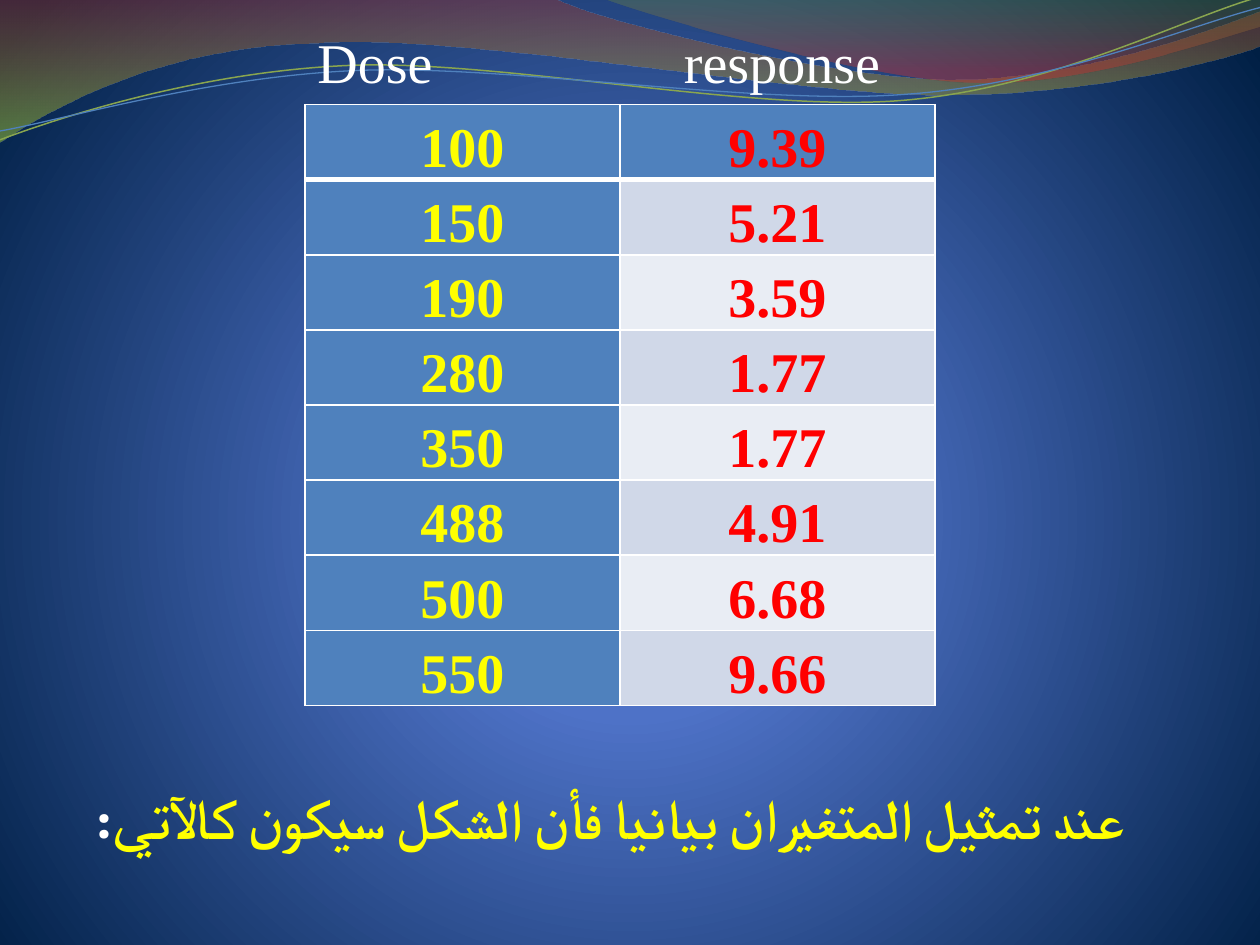
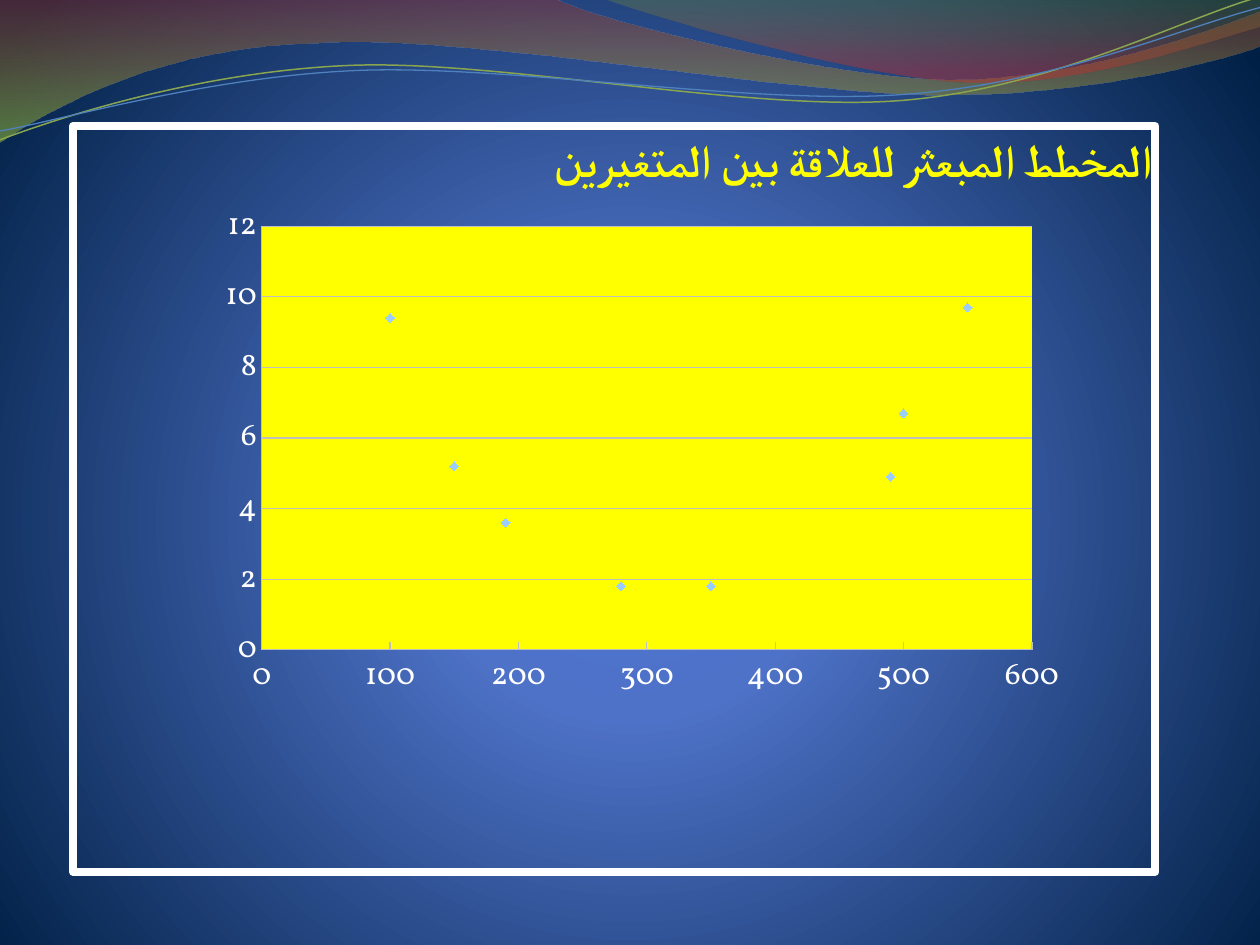
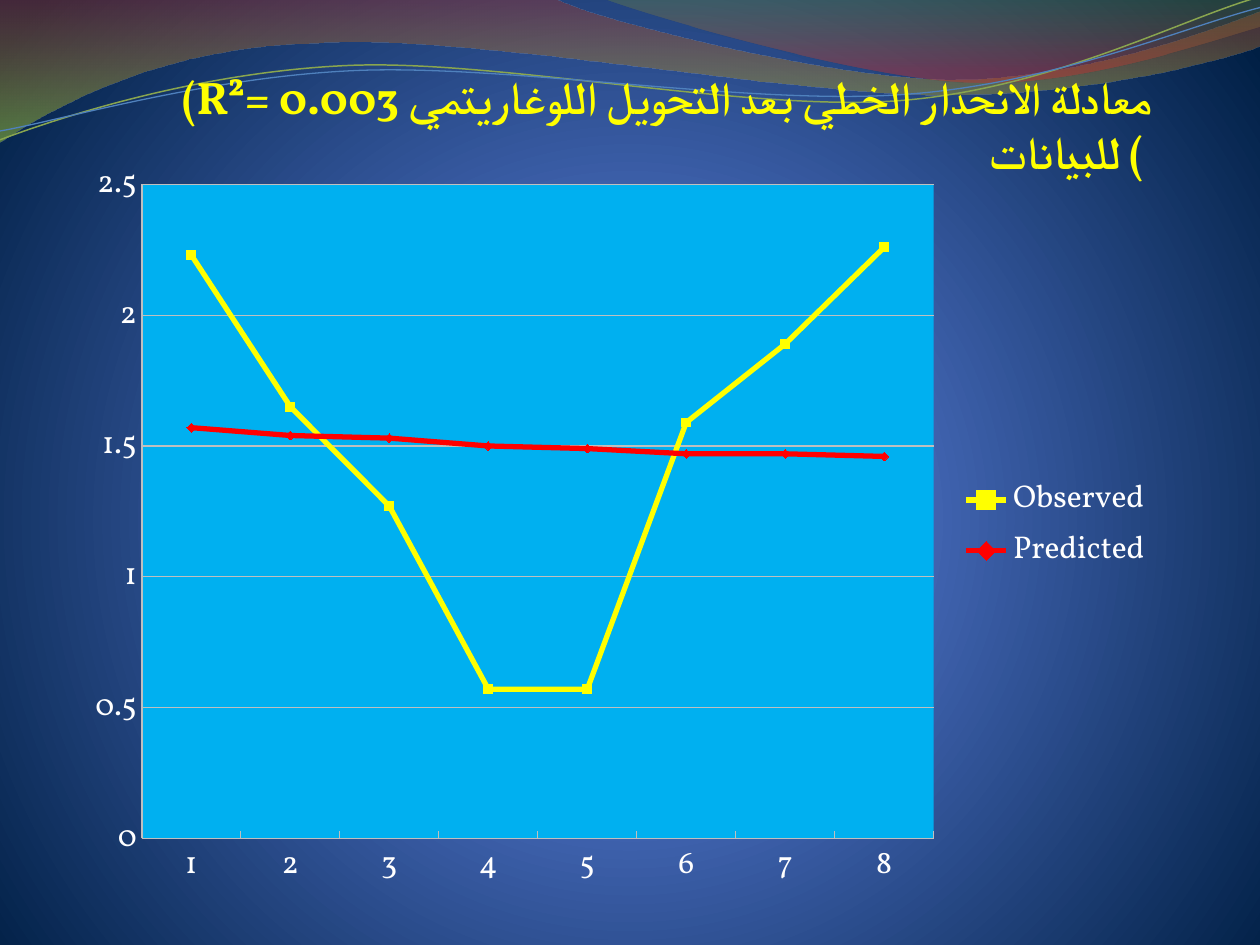
"""Build three slides on a dose-response example: data table, scatter chart and fitted line chart."""
from lxml import etree
from pptx import Presentation
from pptx.chart.data import CategoryChartData, XyChartData
from pptx.dml.color import RGBColor as RGB
from pptx.enum.chart import XL_CHART_TYPE as ChartType, XL_LEGEND_POSITION as LegendPosition
from pptx.enum.chart import XL_MARKER_STYLE as Marker, XL_TICK_MARK as TickMark
from pptx.enum.shapes import MSO_SHAPE as Preset
from pptx.enum.text import MSO_ANCHOR as Anchor, PP_ALIGN as Align
from pptx.oxml.ns import qn
from pptx.util import Inches, Pt

COLORS = {
    "white": "FFFFFF", "yellow": "FFFF00", "red": "FF0000", "blue": "4F81BD",
    "band_dark": "D0D8E8", "band_light": "E9EDF4", "sky": "00B0F0",
    "point": "99CCFF", "grid": "BFBFBF", "olive": "89A54F",
}
C = {name: RGB.from_string(value) for name, value in COLORS.items()}
BODY_FONT, TABLE_FONT = "Vollkorn", "Times New Roman"

BACKGROUND_STOPS = [(0, "4D75D6", 100), (25, "4E72C7", 100), (100, "001F44", 100)]
WAVES = [
    ([(0, 0), (4.4, -0.01), (4.76, 0.17, 6.64, 0.63, 7.58, 0.63), (8.53, 0.63, 9.58, 0.26, 10, 0.09),
      (10.01, 0.36), (9.83, 0.44, 8.7, 0.76, 7.46, 0.75), (6.22, 0.75, 3.82, 0.28, 2.57, 0.34),
      (1.29, 0.36, 0.46, 0.83, -0.01, 1.13)], [(0, "973330", 45), (100, "95C238", 55)], None),
    ([(4.79, -0.01), (5.09, 0.11, 6.82, 0.62, 7.69, 0.65), (8.56, 0.69, 9.61, 0.32, 10, 0.21),
      (10, 0)], [(0, "769537", 30), (80, "BE3330", 45)], None),
    ([(0, 1.11), (0.48, 0.93, 1.58, 0.57, 2.77, 0.52), (3.95, 0.47, 5.93, 0.89, 7.13, 0.8),
      (8.33, 0.71, 9.38, 0.15, 9.98, -0.02)], None, ("olive", 0.85)),
    ([(0, 1.04), (0.47, 0.96, 1.64, 0.61, 2.83, 0.56), (4.03, 0.51, 5.97, 0.84, 7.17, 0.75),
      (8.36, 0.67, 9.41, 0.21, 10, 0.06)], None, ("blue", 0.75)),
]
MEASUREMENTS = [(100, 9.39), (150, 5.21), (190, 3.59), (280, 1.77),
                (350, 1.77), (488, 4.91), (500, 6.68), (550, 9.66)]
FITTED_SERIES = [
    ("Observed", (2.23, 1.65, 1.27, 0.57, 0.57, 1.59, 1.89, 2.26), "yellow", Marker.SQUARE),
    ("Predicted", (1.57, 1.54, 1.53, 1.5, 1.49, 1.47, 1.47, 1.46), "red", Marker.DIAMOND),
]


def set_gradient(fill, element, stops, radial=False):
    """Turn a fill into a gradient with the given (position, colour, opacity) stops."""
    fill.gradient()
    gradient = element.find(".//" + qn("a:gradFill"))
    for child in list(gradient):
        gradient.remove(child)
    stop_list = etree.SubElement(gradient, qn("a:gsLst"))
    for position, color, opacity in stops:
        stop = etree.SubElement(stop_list, qn("a:gs"), pos=str(position * 1000))
        tint = etree.SubElement(stop, qn("a:srgbClr"), val=color)
        if opacity < 100:
            etree.SubElement(tint, qn("a:alpha"), val=str(opacity * 1000))
    if radial:
        circle = etree.SubElement(gradient, qn("a:path"), path="circle")
        etree.SubElement(circle, qn("a:fillToRect"), l="10000", t="110000", r="10000", b="100000")
    else:
        etree.SubElement(gradient, qn("a:lin"), ang="5400000", scaled="0")


def set_font(font, name, size, color, bold=False):
    """Set the typeface, for Latin and Arabic script, and the size, colour and weight of a font."""
    font.name, font.size, font.bold = name, Pt(size), bold
    font.color.rgb = C[color]
    etree.SubElement(font._rPr, qn("a:cs"), typeface=name)


presentation = Presentation()
presentation.slide_width, presentation.slide_height = Inches(10), Inches(7.5)
master = presentation.slide_master
set_gradient(master.background.fill, master.element, BACKGROUND_STOPS, radial=True)

slides = [presentation.slides.add_slide(presentation.slide_layouts[6]) for _ in range(3)]
table_slide, scatter_slide, fitted_slide = slides

for slide in slides:
    for steps, stops, line in WAVES:
        points = [(Inches(step[i]), Inches(step[i + 1])) for step in steps for i in range(0, len(step), 2)]
        builder = slide.shapes.build_freeform(*points[0], scale=1.0)
        builder.add_line_segments(points[1:], close=stops is not None)
        wave = builder.convert_to_shape()
        wave.shadow.inherit = False
        segments = iter(wave.element.findall(".//" + qn("a:lnTo")))
        for step in steps[1:]:
            segment = next(segments)
            if len(step) == 6:
                curve = etree.Element(qn("a:cubicBezTo"))
                segment.addprevious(curve)
                for control in (segment, next(segments), next(segments)):
                    curve.append(control[0])
                    control.getparent().remove(control)
        if stops:
            set_gradient(wave.fill, wave.element, stops)
            wave.line.fill.background()
        else:
            wave.fill.background()
            wave.line.color.rgb, wave.line.width = C[line[0]], Pt(line[1])

table = table_slide.shapes.add_table(
    len(MEASUREMENTS), 2, Inches(2.42), Inches(0.83), Inches(5), Inches(4.77)).table
for row, measurement in enumerate(MEASUREMENTS):
    band = "blue" if row == 0 else "band_dark" if row % 2 else "band_light"
    for column, (value, fill, color) in enumerate(zip(measurement, ("blue", band), ("yellow", "red"))):
        cell = table.cell(row, column)
        cell.vertical_anchor = Anchor.BOTTOM
        cell.margin_left = cell.margin_right = Inches(0.07)
        cell.margin_top = cell.margin_bottom = 0
        properties = cell._tc.get_or_add_tcPr()
        for side in ("lnL", "lnR", "lnT", "lnB"):
            width = 3 if (row, side) in ((0, "lnB"), (1, "lnT")) else 1
            border = etree.SubElement(properties, qn("a:" + side), w=str(Pt(width)))
            border_fill = etree.SubElement(border, qn("a:solidFill"))
            etree.SubElement(border_fill, qn("a:srgbClr"), val=COLORS["white"])
        cell.fill.solid()
        cell.fill.fore_color.rgb = C[fill]
        paragraph = cell.text_frame.paragraphs[0]
        paragraph.text = str(value)
        paragraph.alignment, paragraph.line_spacing = Align.CENTER, 1.15
        set_font(paragraph.font, TABLE_FONT, 32, color, bold=True)

header = table_slide.shapes.add_textbox(Inches(2.42), Inches(0.17), Inches(5.25), Inches(1.18))
header.text_frame.word_wrap = True
paragraph = header.text_frame.paragraphs[0]
paragraph.text = "Dose\tresponse"
set_font(paragraph.font, TABLE_FONT, 32, "white")
tabs = etree.Element(qn("a:tabLst"))
etree.SubElement(tabs, qn("a:tab"), pos=str(Inches(2.91)), algn="l")
paragraph._p.get_or_add_pPr().insert(0, tabs)

caption = table_slide.shapes.add_textbox(Inches(0.67), Inches(6.17), Inches(9.08), Inches(0.64))
caption.text_frame.word_wrap = True
paragraph = caption.text_frame.paragraphs[0]
paragraph._p.get_or_add_pPr().set("rtl", "1")
for text, color in (("عند تمثيل المتغيران بيانيا فأن الشكل سيكون كالآتي", "yellow"), (":", "white")):
    run = paragraph.add_run()
    run.text = text
    set_font(run.font, BODY_FONT, 32, color, bold=True)

for slide, top, height, text, framed in (
    (scatter_slide, 1, 5.92, "المخطط المبعثر للعلاقة بين المتغيرين", True),
    (fitted_slide, 0.5, 6.75,
     "(R²= 0.003 معادلة الانحدار الخطي بعد التحويل اللوغاريتمي للبيانات ( ", False),
):
    bounds = Inches(0.58), Inches(top), Inches(8.59), Inches(height)
    if framed:
        title = slide.shapes.add_shape(Preset.RECTANGLE, *bounds)
        title.shadow.inherit = False
        title.fill.background()
        title.line.color.rgb, title.line.width = C["white"], Pt(4.5)
    else:
        title = slide.shapes.add_textbox(*bounds)
    frame = title.text_frame
    frame.word_wrap, frame.vertical_anchor = True, Anchor.TOP
    frame.margin_left, frame.margin_right = 0, Inches(0.02)
    paragraph = frame.paragraphs[0]
    paragraph.text = text
    paragraph.alignment, paragraph.space_before = Align.RIGHT, Pt(5)
    set_font(paragraph.font, BODY_FONT, 26, "yellow", bold=True)

scatter_data = XyChartData()
scatter_series = scatter_data.add_series("Series 1")
for dose, response in MEASUREMENTS:
    scatter_series.add_data_point(round(dose, -1), round(response, 1))
scatter = scatter_slide.shapes.add_chart(
    ChartType.XY_SCATTER, Inches(1.08), Inches(1.33), Inches(7.5), Inches(4.75), scatter_data).chart

fitted_data = CategoryChartData()
fitted_data.categories = [str(number) for number in range(1, 9)]
for name, values, color, marker in FITTED_SERIES:
    fitted_data.add_series(name, values)
fitted = fitted_slide.shapes.add_chart(
    ChartType.LINE_MARKERS, Inches(0.58), Inches(1.17), Inches(8.67), Inches(6), fitted_data).chart

for chart, plot_color, layout, maximum, unit in (
    (scatter, "yellow", (0.133, 0.098, 0.815, 0.708), 12, 2),
    (fitted, "sky", (0.063, 0.049, 0.725, 0.865), 2.5, 0.5),
):
    chart.has_title = chart.has_legend = False
    set_font(chart.font, BODY_FONT, 18, "white")
    chart.plots[0].vary_by_categories = False
    for axis in (chart.category_axis, chart.value_axis):
        axis.major_tick_mark, axis.minor_tick_mark = TickMark.INSIDE, TickMark.NONE
        axis.format.line.color.rgb = C["grid"]
        axis.tick_labels.number_format, axis.tick_labels.number_format_is_linked = "General", False
    value_axis = chart.value_axis
    value_axis.has_major_gridlines = True
    value_axis.major_gridlines.format.line.color.rgb = C["grid"]
    value_axis.minimum_scale, value_axis.maximum_scale, value_axis.major_unit = 0, maximum, unit
    chart.category_axis.has_major_gridlines = False

    plot_area = chart.element.find(".//" + qn("c:plotArea"))
    for old_layout in plot_area.findall(qn("c:layout")):
        plot_area.remove(old_layout)
    plot_layout = etree.Element(qn("c:layout"))
    manual = etree.SubElement(plot_layout, qn("c:manualLayout"))
    settings = [("layoutTarget", "inner"), ("xMode", "edge"), ("yMode", "edge"), *zip("xywh", layout)]
    for tag, value in settings:
        etree.SubElement(manual, qn("c:" + tag), val=str(value))
    plot_area.insert(0, plot_layout)
    plot_format = etree.SubElement(plot_area, qn("c:spPr"))
    plot_fill = etree.SubElement(plot_format, qn("a:solidFill"))
    etree.SubElement(plot_fill, qn("a:srgbClr"), val=COLORS[plot_color])

dose_axis = scatter.category_axis
dose_axis.minimum_scale, dose_axis.maximum_scale, dose_axis.major_unit = 0, 600, 100
fitted.has_legend = True
fitted.legend.position, fitted.legend.include_in_layout = LegendPosition.RIGHT, False

dose_points = scatter.plots[0].series[0]
dose_points.format.line.fill.background()
series_styles = [(dose_points, "point", Marker.DIAMOND)]
for series, (name, values, color, marker) in zip(fitted.plots[0].series, FITTED_SERIES):
    series_styles.append((series, color, marker))
    series.format.line.color.rgb, series.format.line.width = C[color], Pt(3)
    series.smooth = False
for series, color, marker in series_styles:
    series.marker.style, series.marker.size = marker, 5
    series.marker.format.fill.solid()
    series.marker.format.fill.fore_color.rgb = C[color]
    series.marker.format.line.color.rgb = C[color]

presentation.save("out.pptx")
